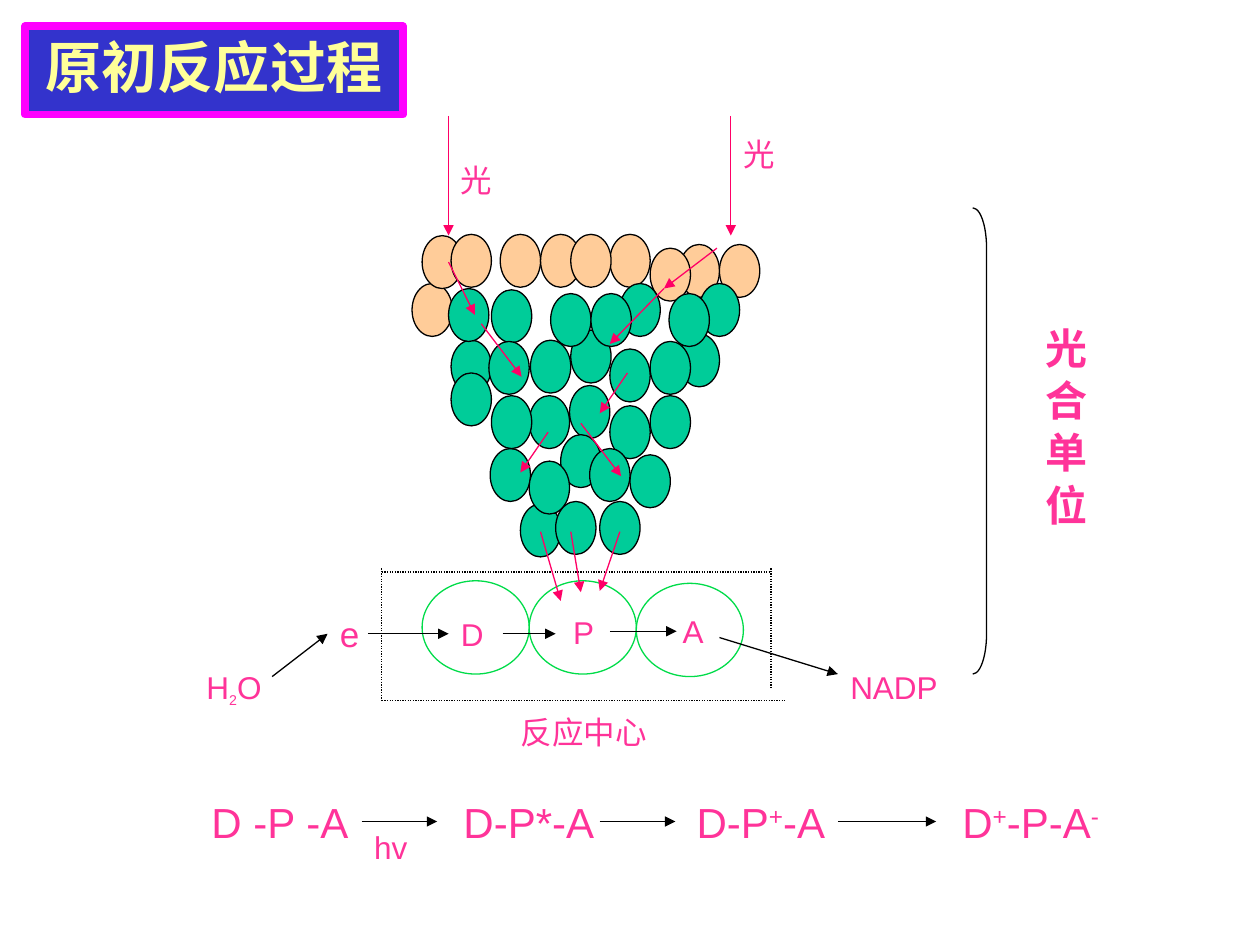
from lxml import etree
from pptx import Presentation
from pptx.dml.color import RGBColor
from pptx.enum.dml import MSO_LINE
from pptx.enum.shapes import MSO_CONNECTOR, MSO_SHAPE
from pptx.enum.text import MSO_ANCHOR, PP_ALIGN
from pptx.oxml.ns import qn
from pptx.util import Inches, Pt

LEFT, CENTER = PP_ALIGN.LEFT, PP_ALIGN.CENTER
TOP = MSO_ANCHOR.TOP
DOTTED = MSO_LINE.ROUND_DOT
STRAIGHT = MSO_CONNECTOR.STRAIGHT
OVAL, BRACKET, BOX = MSO_SHAPE.OVAL, MSO_SHAPE.RIGHT_BRACKET, MSO_SHAPE.RECTANGLE

COLORS = {
    "ink": "000000", "label": "FF3399", "light": "FF0066",
    "antenna": "FFCC99", "chlorophyll": "00CC99", "center": "00DC49",
    "title_fill": "3333CC", "title_line": "FF00FF", "title_text": "FFFF99",
}
SUPER, SUB = 30, -25  # baseline shift in percent


class Diagram:
    """Draws on one slide, on a grid of 100 columns by 75 rows."""
    columns, rows = 100, 75
    font, line_width = "Arial", 0.75

    def __init__(self, presentation):
        self.slide = presentation.slides.add_slide(presentation.slide_layouts[6])
        self.column = presentation.slide_width / self.columns
        self.row = presentation.slide_height / self.rows

    def place(self, *lengths):
        """Turn alternating columns and rows into slide lengths."""
        units = (self.column, self.row)
        return [round(length * units[i % 2]) for i, length in enumerate(lengths)]

    def color(self, name):
        return RGBColor.from_string(COLORS[name])

    def shape(self, kind, box, line="ink", fill=None, width=line_width):
        shape = self.slide.shapes.add_shape(kind, *self.place(*box))
        shape.shadow.inherit = False
        if fill:
            shape.fill.solid()
            shape.fill.fore_color.rgb = self.color(fill)
        else:
            shape.fill.background()
        shape.line.color.rgb = self.color(line)
        shape.line.width = Pt(width)
        return shape

    def line(self, ends, color="ink", dash=None, arrow=True):
        connector = self.slide.shapes.add_connector(STRAIGHT, *self.place(*ends))
        connector.line.color.rgb = self.color(color)
        connector.line.width = Pt(self.line_width)
        if dash:
            connector.line.dash_style = dash
        properties = connector._element.spPr
        if arrow:
            etree.SubElement(properties.find(qn("a:ln")), qn("a:tailEnd"), type="triangle")
        etree.SubElement(properties, qn("a:effectLst"))

    def add_runs(self, shape, parts, size, color="label", font=font, bold=False, align=LEFT):
        """Fill one paragraph with (text, baseline) parts."""
        frame = shape.text_frame
        frame.word_wrap = True
        frame.vertical_anchor = TOP
        paragraph = frame.paragraphs[0]
        paragraph.alignment = align
        for text, baseline in parts:
            run = paragraph.add_run()
            run.text = text
            run.font.size = Pt(14 if baseline == SUB else size)
            run.font.name = font
            run.font.bold = bold
            run.font.color.rgb = self.color(color)
            if baseline:
                run._r.get_or_add_rPr().set("baseline", str(baseline * 1000))

    def label(self, box, parts, size=18, **style):
        text_box = self.slide.shapes.add_textbox(*self.place(*box))
        if isinstance(parts, str):
            parts = [(parts, 0)]
        self.add_runs(text_box, parts, size, **style)
        return text_box

    def vertical_label(self, box, text, size, **style):
        text_box = self.label(box, text, size, **style)
        text_box.text_frame._txBody.bodyPr.set("vert", "eaVert")

    def tab_stops(self, text_box, stops):
        properties = text_box.text_frame.paragraphs[0]._p.get_or_add_pPr()
        tabs = etree.SubElement(properties, qn("a:tabLst"))
        for stop in stops:
            etree.SubElement(tabs, qn("a:tab"), pos=str(round(stop * self.column)), algn="l")


# Left and top of each pigment molecule, from back to front
MOLECULE_SIZE = (3.2, 4.2)
MOLECULES = {
    "antenna": [
        (53.9, 19.4), (48.4, 18.6), (32.7, 22.5), (33.5, 18.7), (39.7, 18.6),
        (42.9, 18.6), (35.8, 18.6), (45.3, 18.6), (51.6, 19.7), (57.1, 19.4)],
    "chlorophyll": [
        (48.4, 27.7), (45.3, 26.2), (42.1, 27), (38.9, 35.6), (41.3, 40),
        (35.8, 27), (42, 31.4), (39, 23), (35.6, 22.9), (39, 31.4),
        (38.8, 27.1), (45.2, 30.6), (35.8, 29.6), (53.9, 26.5), (49.2, 22.5),
        (55.5, 22.5), (51.6, 27.1), (51.6, 31.4), (48.4, 32.2), (50, 36.1),
        (44.5, 34.5), (46.8, 35.6), (42, 36.6), (44.1, 39.8), (47.6, 39.8),
        (53.1, 23.3), (43.7, 23.3), (46.9, 23.3)],
}
# Arrows as start column, start row, end column, end row
LIGHT_ARROWS = [
    (35.6, 9.2, 35.6, 18.7), (58, 9.2, 58, 18.7),
    (56.9, 19.7, 52.7, 22.9), (52.7, 22.9, 48.4, 27.3),
    (49.8, 29.6, 47.6, 32.8), (46.1, 33.6, 49.3, 37.8),
    (35.6, 20.8, 37.7, 25), (38.2, 25.7, 41.4, 29.9), (43.5, 34.3, 41.3, 37.5),
    (45.3, 42.2, 46.1, 47), (49.2, 42.2, 47.6, 46.9), (42.9, 42.2, 44.5, 47.7)]
ELECTRON_ARROWS = [
    (21.6, 53.7, 26, 50.3), (29.2, 50.3, 35.6, 50.3), (39.9, 50.3, 44.1, 50.3),
    (48.4, 50.1, 53.7, 50.1), (57.1, 50.6, 66.5, 53.5)]
EQUATION_ARROWS = [(28.7, 65.2, 34.7, 65.2), (47.6, 65.2, 53.6, 65.2), (66.5, 65.2, 74.3, 65.2)]
CENTER_FRAME = [
    (30.3, 45.4, 61.2, 45.4), (30.3, 45.1, 30.3, 55.6),
    (30.3, 55.6, 62.3, 55.6), (61.2, 45.1, 61.2, 54.6)]


def main():
    presentation = Presentation()
    presentation.slide_width, presentation.slide_height = Inches(10), Inches(7.5)
    diagram = Diagram(presentation)

    # Title
    title = diagram.shape(BOX, (2, 2.1, 30, 7), "title_line", "title_fill", 4.5)
    diagram.add_runs(title, [("原初反应过程", 0)], 32, "title_text",
                     "Times New Roman", bold=True, align=CENTER)

    # Pigment molecules
    for kind, places in MOLECULES.items():
        for place in places:
            diagram.shape(OVAL, place + MOLECULE_SIZE, fill=kind)

    # Reaction center with donor, pigment and acceptor
    for left, top in [(50.5, 46.3), (42, 46.1), (33.5, 46.1)]:
        diagram.shape(OVAL, (left, top, 8.5, 7.4), "center")
    for ends in CENTER_FRAME:
        diagram.line(ends, dash=DOTTED, arrow=False)

    # Light and electron flow
    for ends in LIGHT_ARROWS:
        diagram.line(ends, "light")
    for ends in ELECTRON_ARROWS + EQUATION_ARROWS:
        diagram.line(ends)

    # Labels
    for left, top, width, text in [
            (35.6, 12.3, 5.3, "光"), (58, 10.2, 4.3, "光"),
            (35.6, 48.3, 4.3, "D"), (44.5, 48.2, 4.3, "P"), (53.2, 48.1, 4.3, "A"),
            (66.5, 52.5, 11.7, "NADP"), (28.7, 65.2, 6.9, "hv"),
            (15.4, 52.5, 10.7, [("H", 0), ("2", SUB), ("O", 0)])]:
        diagram.label((left, top, width, 4), text)
    diagram.label((26, 48.1, 4.3, 4.3), "e", 20)
    diagram.label((38.5, 56.1, 15.7, 4), "反应中心", align=CENTER)

    # Photosynthetic unit
    bracket = diagram.shape(BRACKET, (77.2, 16.5, 1.1, 37))
    bracket.adjustments[0] = 2.92
    diagram.vertical_label((81, 25, 6, 26.4), "光 合 单 位", 24, bold=True)

    # Equation
    equation = diagram.label((15.8, 62.7, 82.5, 5), [
        ("D -P -A\tD-P*-A\tD-P", 0), ("+", SUPER), ("-A\tD", 0),
        ("+", SUPER), ("-P-A", 0), ("-", SUPER)], 24)
    diagram.tab_stops(equation, [20, 38.5, 59.6])

    presentation.save("out.pptx")


if __name__ == "__main__":
    main()
